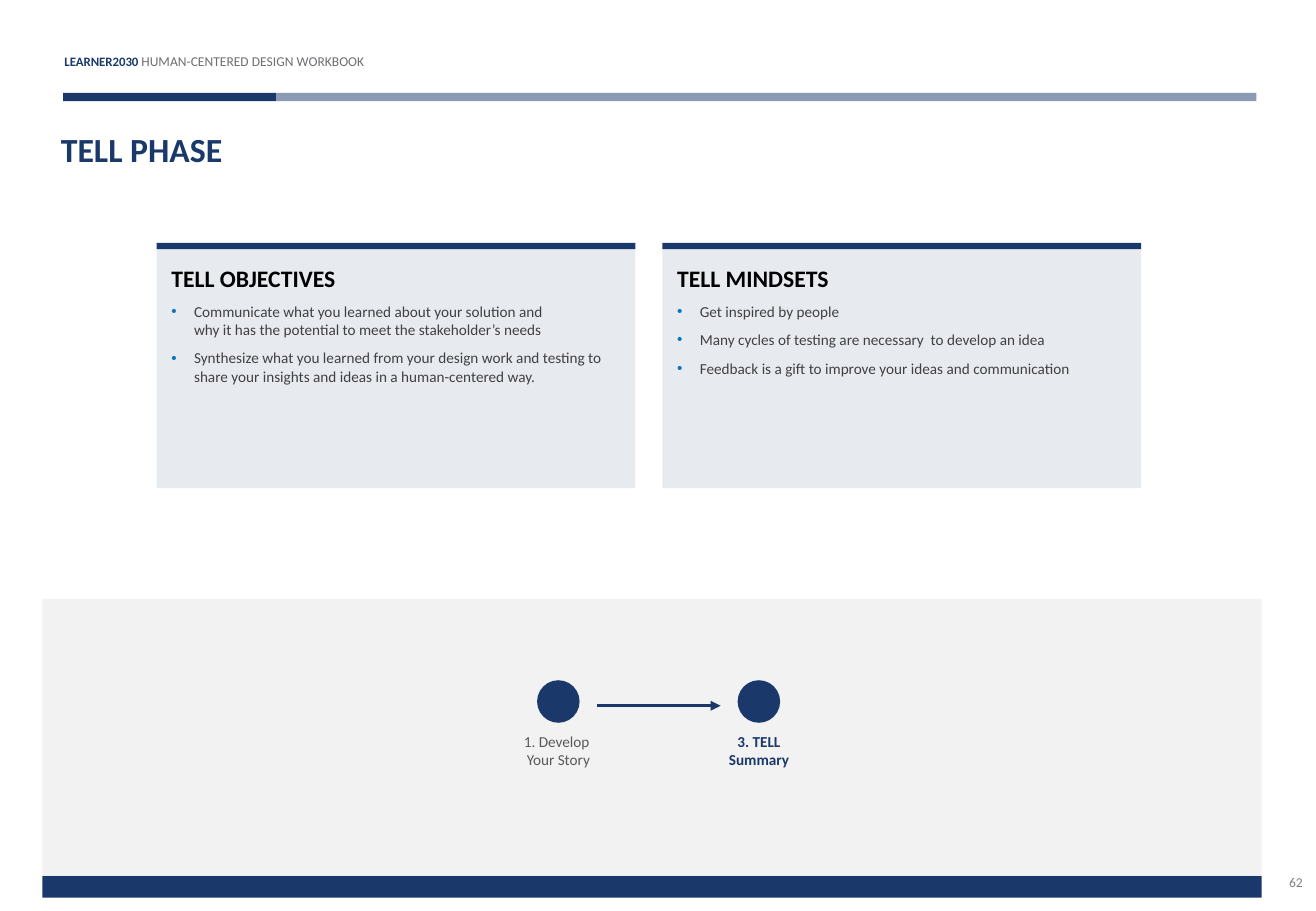
from dataclasses import dataclass

import lxml.etree
import pptx
import pptx.dml.color
import pptx.enum.shapes
import pptx.enum.text
import pptx.oxml.ns
import pptx.util

Kind = pptx.enum.shapes.MSO_SHAPE
Align = pptx.enum.text.PP_ALIGN
Anchor = pptx.enum.text.MSO_ANCHOR
Pt = pptx.util.Pt
WIDE = pptx.util.Inches(10.83)
HIGH = pptx.util.Inches(7.5)


@dataclass(frozen=True)
class Theme:
    face: str = "Calibri"
    navy: str = "1A396A"
    panel: str = "F2F2F2"
    black: str = "000000"
    ink: str = "414042"
    label: str = "595959"
    muted: str = "6D6E71"
    folio: str = "808080"
    bullet: str = "0C73BD"
    title: float = 20
    head: float = 14
    body: float = 9
    small: float = 8
    brand: float = 7.6


LOOK = Theme()


def across(share):
    return round(WIDE * share / 100)


def down(share):
    return round(HIGH * share / 100)


def place(left, top, width, height):
    return across(left), down(top), across(width), down(height)


def rgb(color):
    return pptx.dml.color.RGBColor.from_string(color)


def add_tag(parent, tag, **attrs):
    return lxml.etree.SubElement(parent, pptx.oxml.ns.qn(tag), attrs)


def style(font, size, color, bold=False):
    font.name = LOOK.face
    font.size = Pt(size)
    font.bold = bold
    font.color.rgb = rgb(color)


def add_block(slide, area, color, kind=Kind.RECTANGLE, alpha=100):
    block = slide.shapes.add_shape(kind, *place(*area))
    block.shadow.inherit = False
    block.fill.solid()
    block.fill.fore_color.rgb = rgb(color)
    block.line.fill.background()
    if alpha < 100:
        tint = block.fill._xPr.find(".//" + pptx.oxml.ns.qn("a:srgbClr"))
        add_tag(tint, "a:alpha", val=str(alpha * 1000))
    return block


def set_frame(shape, inset, anchor=Anchor.TOP):
    frame = shape.text_frame
    frame.word_wrap = True
    frame.vertical_anchor = anchor
    frame.margin_left = frame.margin_right = Pt(inset[0])
    frame.margin_top = frame.margin_bottom = Pt(inset[1])
    return frame


def add_text(slide, area, lines, size, color, bold=False, align=Align.LEFT,
             inset=(0, 0), anchor=Anchor.TOP):
    frame = set_frame(slide.shapes.add_textbox(*place(*area)), inset, anchor)
    for rank, line in enumerate(lines):
        para = frame.add_paragraph() if rank else frame.paragraphs[0]
        para.text = line
        para.alignment = align
        style(para.font, size, color, bold)


def add_header(slide):
    box = slide.shapes.add_textbox(*place(4.9, 5.6, 28, 2))
    para = set_frame(box, (0, 1.4)).paragraphs[0]
    for words, size, color, bold in (
        ("LEARNER2030 ", LOOK.brand, LOOK.navy, True),
        ("HUMAN-CENTERED DESIGN WORKBOOK", LOOK.small, LOOK.muted, False),
    ):
        run = para.add_run()
        run.text = words
        style(run.font, size, color, bold)
    add_block(slide, (4.8, 10.2, 16.16, 0.9), LOOK.navy)
    add_block(slide, (20.96, 10.2, 74.52, 0.9), LOOK.navy, alpha=50)


def add_card(slide, left, head, points):
    card = add_block(slide, (left, 27.33, 36.38, 26.27), LOOK.navy, alpha=10)
    frame = set_frame(card, (8.64, 8.64))
    para = frame.paragraphs[0]
    para.text = head
    para.alignment = Align.LEFT
    para.space_after = Pt(6)
    style(para.font, LOOK.head, LOOK.black, True)
    for point in points:
        para = frame.add_paragraph()
        para.text = point
        para.alignment = Align.LEFT
        para.space_after = Pt(6)
        props = para._p.get_or_add_pPr()
        dent = Pt(13.5)
        props.set("marL", str(dent))
        props.set("indent", str(-dent))
        add_tag(add_tag(props, "a:buClr"), "a:srgbClr", val=LOOK.bullet)
        add_tag(props, "a:buFont", typeface="Arial")
        add_tag(props, "a:buChar", char="•")
        style(para.font, LOOK.body, LOOK.ink)
    add_block(slide, (left, 26.67, 36.38, 0.67), LOOK.navy)


def add_step(slide, left, lines, color, bold):
    add_block(slide, (left, 74.67, 3.23, 4.67), LOOK.navy, Kind.OVAL)
    add_text(slide, (left - 4.38, 79.73, 12, 5.33), lines, LOOK.body, color,
             bold, Align.CENTER, (7.2, 3.6))


def add_arrow(slide, start, end, level):
    arrow = slide.shapes.add_connector(
        pptx.enum.shapes.MSO_CONNECTOR.STRAIGHT,
        across(start), down(level), across(end), down(level))
    arrow.line.color.rgb = rgb(LOOK.navy)
    arrow.line.width = Pt(1.5)
    add_tag(arrow.line._get_or_add_ln(), "a:tailEnd", type="triangle")
    add_tag(arrow._element.spPr, "a:effectLst")


def main():
    deck = pptx.Presentation()
    deck.slide_width, deck.slide_height = WIDE, HIGH
    slide = deck.slides.add_slide(deck.slide_layouts[6])

    add_header(slide)
    add_text(slide, (95.2, 95.2, 3.79, 3.33), ["62"], LOOK.small, LOOK.folio,
             align=Align.RIGHT, anchor=Anchor.MIDDLE)
    add_block(slide, (3.23, 96.13, 92.65, 2.4), LOOK.navy)
    add_block(slide, (3.23, 65.73, 92.65, 30.4), LOOK.panel)
    add_text(slide, (4.62, 14.13, 61.31, 4.53), ["TELL PHASE"],
             LOOK.title, LOOK.navy, True)

    cards = (
        ("TELL OBJECTIVES", (
            "Communicate what you learned about your solution and \v"
            "why it has the potential to meet the stakeholder’s needs",
            "Synthesize what you learned from your design work and testing to "
            "share your insights and ideas in a human-centered way.")),
        ("TELL MINDSETS", (
            "Get inspired by people",
            "Many cycles of testing are necessary\u00a0 to develop an idea",
            "Feedback is a gift to improve your ideas and communication")),
    )
    for rank, (head, points) in enumerate(cards):
        add_card(slide, 11.91 + rank * 38.43, head, points)

    steps = (
        (["1. Develop \vYour Story"], LOOK.label, False),
        (["3. TELL", "Summary"], LOOK.navy, True),
    )
    for rank, (lines, color, bold) in enumerate(steps):
        add_step(slide, 40.81 + rank * 15.24, lines, color, bold)
    add_arrow(slide, 45.34, 54.76, 77.47)

    deck.save("out.pptx")


if __name__ == "__main__":
    main()
